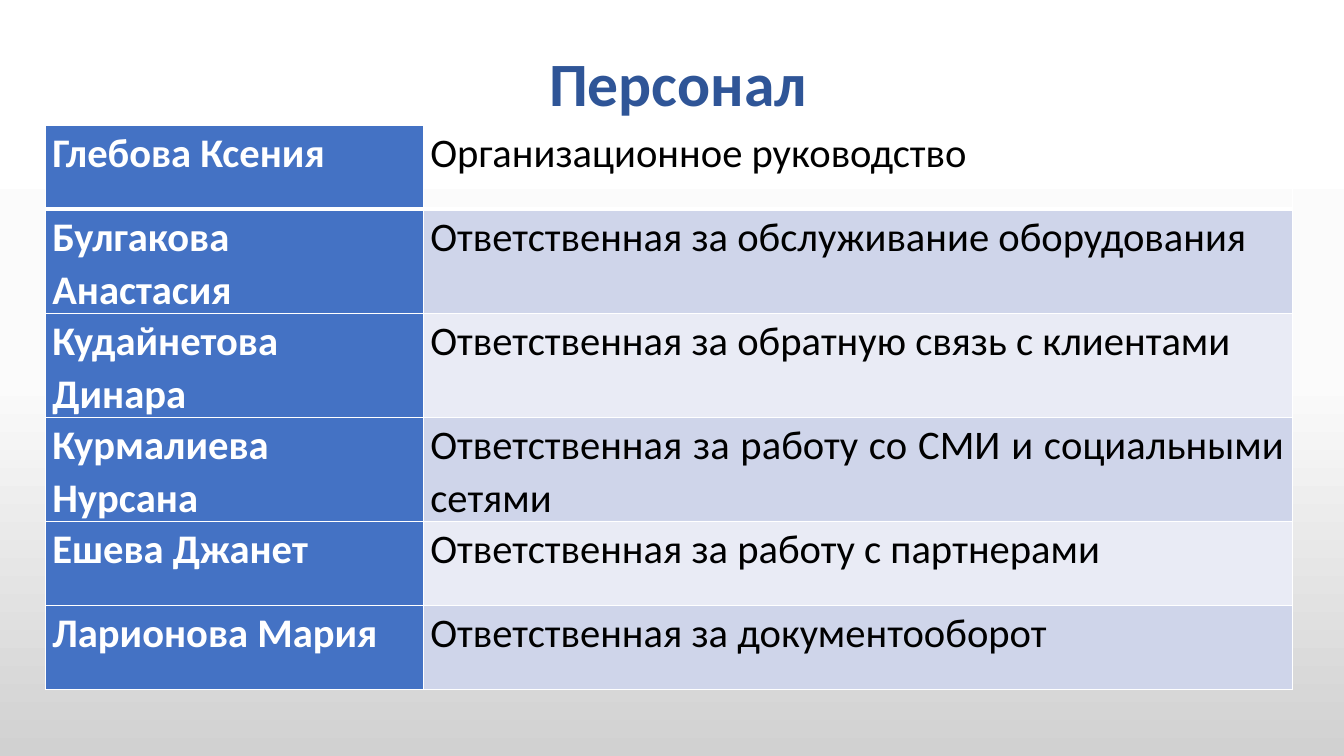
from copy import deepcopy

from pptx import Presentation
from pptx.dml.color import RGBColor
from pptx.enum.text import MSO_ANCHOR, MSO_AUTO_SIZE, PP_ALIGN
from pptx.oxml import parse_xml
from pptx.oxml.ns import nsdecls, qn
from pptx.util import Pt

WHITE = RGBColor(0xFF, 0xFF, 0xFF)
BLACK = RGBColor(0, 0, 0)
NAVY = RGBColor(0x2F, 0x55, 0x97)
BLUE = RGBColor(0x44, 0x72, 0xC4)
BANDS = RGBColor(0xE9, 0xEB, 0xF5), RGBColor(0xCF, 0xD5, 0xEA)
STOPS = (0, WHITE), (0.5, RGBColor(0xFB, 0xFB, 0xFB)), (1, RGBColor(0xD1, 0xD1, 0xD1))

STAFF = [
    ("Глебова Ксения", "Организационное руководство"),
    ("Булгакова Анастасия", "Ответственная за обслуживание оборудования"),
    ("Кудайнетова Динара", "Ответственная за обратную связь с клиентами"),
    ("Курмалиева Нурсана", "Ответственная за работу со СМИ и социальными сетями"),
    ("Ешева Джанет", "Ответственная за работу с партнерами"),
    ("Ларионова Мария", "Ответственная за документооборот"),
]
HEIGHTS = 60, 62, 60, 60, 60, 60


class Page:
    font = "Calibri"
    inset = dict(margin_left=Pt(5), margin_right=Pt(5), margin_top=0, margin_bottom=0)

    def __init__(self, deck):
        self.slide = deck.slides.add_slide(deck.slide_layouts[5])

    def put(self, item, values):
        for name, value in values.items():
            setattr(item, name, value)

    def label(self, para, text, color, size, bold, **form):
        para.text = text
        self.put(para, form)
        self.put(para.font, dict(name=self.font, size=Pt(size), bold=bold))
        para.font.color.rgb = color

    def backdrop(self, stops):
        fill = self.slide.background.fill
        fill.gradient()
        fill.gradient_angle = 270
        marks = self.slide.element.find(".//" + qn("a:gsLst"))
        marks.append(deepcopy(marks[0]))
        for mark, (place, color) in zip(fill.gradient_stops, stops):
            mark.position = place
            mark.color.rgb = color

    def title(self, text, left, top, width, height):
        box = self.slide.shapes.title
        self.put(box, dict(left=Pt(left), top=Pt(top), width=Pt(width), height=Pt(height)))
        self.put(box.text_frame, dict(word_wrap=False, vertical_anchor=MSO_ANCHOR.TOP,
                                      auto_size=MSO_AUTO_SIZE.SHAPE_TO_FIT_TEXT))
        self.label(box.text_frame.paragraphs[0], text, NAVY, 44, True,
                   alignment=PP_ALIGN.CENTER)

    def border(self, cell, widths):
        """Draw white cell edges; widths maps L, R, T and B to points."""
        props = cell._tc.get_or_add_tcPr()
        for side, width in widths.items():
            props.append(parse_xml(
                f'<a:ln{side} {nsdecls("a")} w="{Pt(width)}"><a:solidFill>'
                f'<a:srgbClr val="{WHITE}"/></a:solidFill></a:ln{side}>'))

    def table(self, rows, left, top, widths, heights):
        grid = self.slide.shapes.add_table(
            len(rows), len(widths), Pt(left), Pt(top), Pt(sum(widths)), Pt(sum(heights))).table
        self.put(grid, dict(first_row=False, horz_banding=False))
        for column, width in zip(grid.columns, widths):
            column.width = Pt(width)
        for i, (row, texts) in enumerate(zip(grid.rows, rows)):
            row.height = Pt(heights[i])
            edges = dict(L=1, R=1, T=3 if i == 1 else 1, B=3 if i == 0 else 1)
            for j, (cell, text) in enumerate(zip(row.cells, texts)):
                self.put(cell, self.inset)
                self.border(cell, edges)
                if i == 0 and j == 1:
                    cell.fill.background()
                else:
                    cell.fill.solid()
                    cell.fill.fore_color.rgb = BANDS[i % 2] if j else BLUE
                self.label(cell.text_frame.paragraphs[0], text, BLACK if j else WHITE,
                           29, j == 0, line_spacing=1.07,
                           alignment=PP_ALIGN.JUSTIFY if j else PP_ALIGN.LEFT)


def main():
    deck = Presentation()
    deck.slide_width, deck.slide_height = Pt(960), Pt(540)
    page = Page(deck)
    page.backdrop(STOPS)
    page.title("Персонал", 384, 28.8, 201, 60.5)
    page.table(STAFF, 32.4, 89.3, (270, 620.6), HEIGHTS)
    deck.save("out.pptx")


if __name__ == "__main__":
    main()
